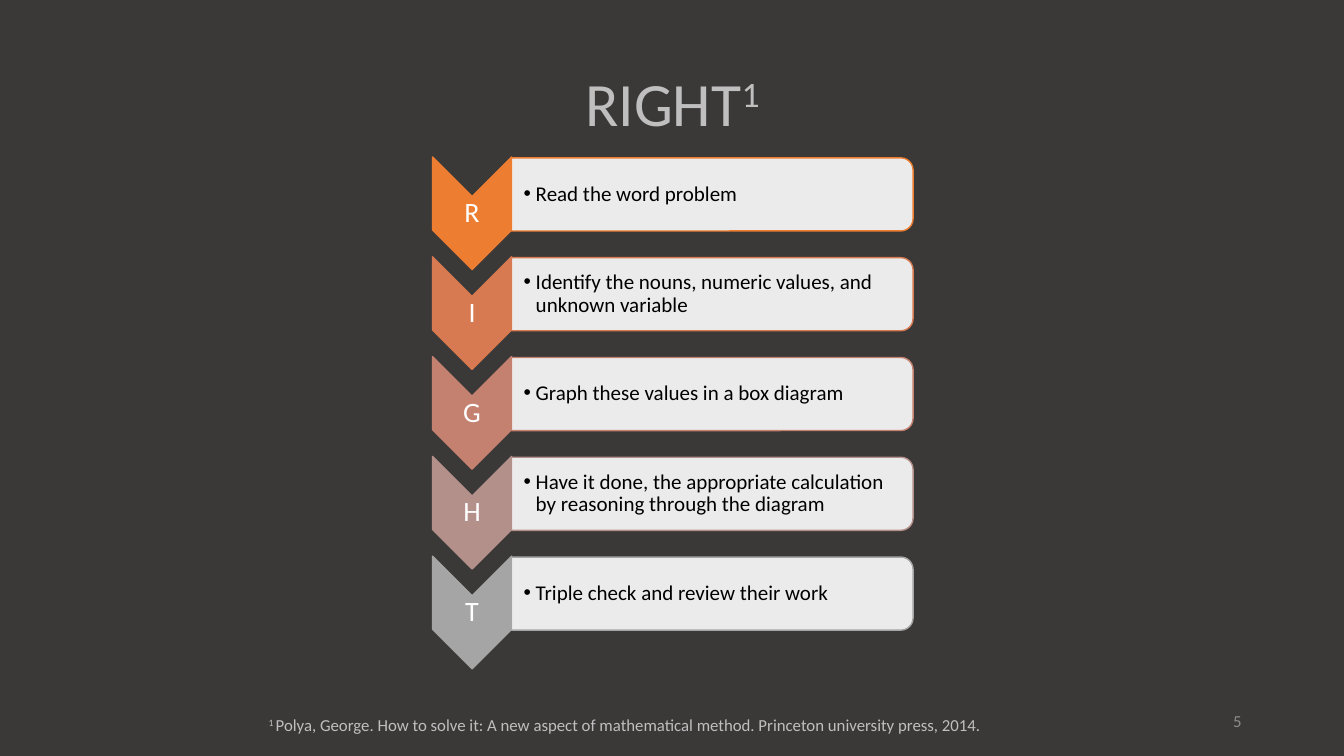
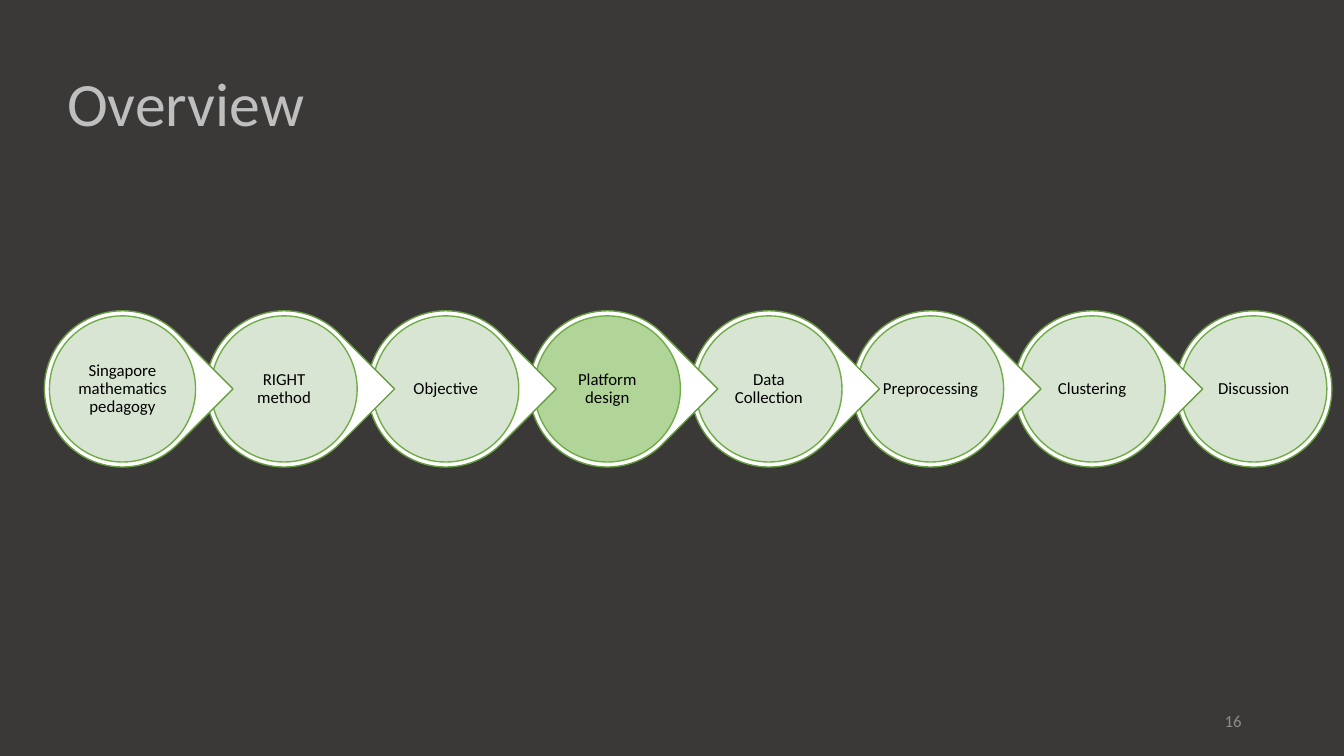
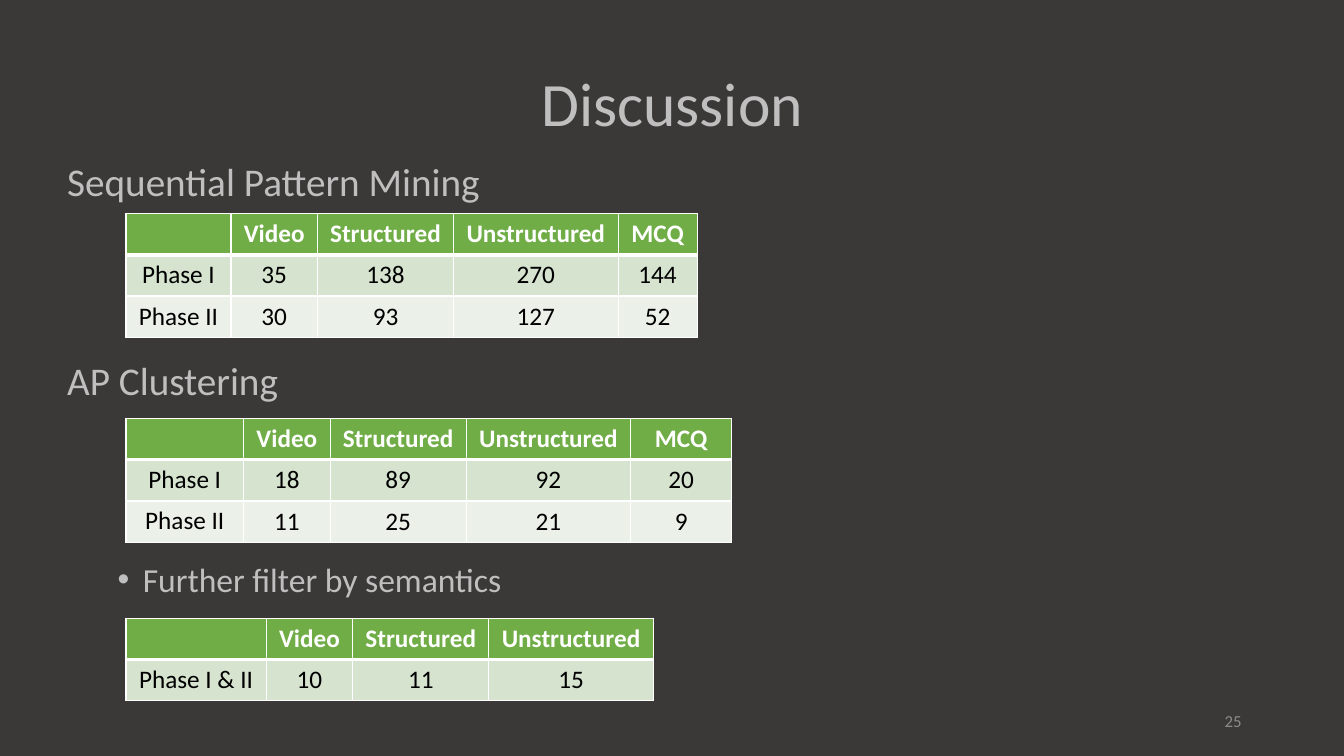
from dataclasses import dataclass

from lxml import etree
from pptx import Presentation, util as u
from pptx.dml.color import RGBColor
from pptx.enum import shapes, text
from pptx.oxml import ns

# The grid has square modules of 1/12 inch: 160 columns by 90 rows.
COLUMNS, ROWS = 160, 90
MODULE = u.Inches(1) / 12
SHAPE = shapes.MSO_SHAPE
ALIGN = text.PP_ALIGN
ANCHOR = text.MSO_ANCHOR


@dataclass(frozen=True)
class Theme:
    font: str = "Calibri"
    background: str = "3B3838"
    title: str = "BFBFBF"
    page_number: str = "8C8C8C"
    white: str = "FFFFFF"
    black: str = "000000"
    green: str = "70AD47"
    green_edge: str = "669D40"
    green_pale: str = "D5E3CF"
    green_faint: str = "EBF1E9"
    green_current: str = "A9D18E"
    steps: tuple = ("ED7D31", "D87A51", "C48170", "B4908B", "A5A5A5")
    title_size: int = 44
    heading_size: int = 28
    bullet_size: int = 24
    letter_size: int = 20
    cell_size: int = 18
    step_size: int = 15
    small_size: int = 12


THEME = Theme()


def grid(*modules):
    return [u.Emu(round(value * MODULE)) for value in modules]


def add_xml(parent, tag, **attributes):
    return etree.SubElement(parent, ns.qn(tag), attributes)


def write(para, *pieces, size, color, align=ALIGN.LEFT, bold=False,
          spacing=0.9, before=0, bullet=None, indent=0, hanging=0):
    """Fill a paragraph; a piece is a string or (string, raised by percent)."""
    props = para._p.get_or_add_pPr()
    props.set("marL", str(u.Inches(indent)))
    props.set("indent", str(-u.Inches(hanging)))
    if bullet:
        add_xml(props, "a:buFont", typeface="Arial")
        add_xml(props, "a:buChar", char=bullet)
    else:
        add_xml(props, "a:buNone")
    para.alignment = align
    para.line_spacing = spacing
    para.space_before = u.Pt(before)
    for piece in pieces:
        words, raised = (piece, 0) if isinstance(piece, str) else piece
        span = para.add_run()
        span.text = words
        span.font.name = THEME.font
        span.font.size = u.Pt(size)
        span.font.bold = bold
        span.font.color.rgb = RGBColor.from_string(color)
        if raised:
            span._r.get_or_add_rPr().set("baseline", str(raised * 1000))


class SlideWriter:
    """Holds the deck, its theme and the slide being written."""

    def __init__(self, theme):
        self.theme = theme
        self.deck = Presentation()
        self.deck.slide_width, self.deck.slide_height = grid(COLUMNS, ROWS)
        self.paint(self.deck.slide_master.background.fill, theme.background)
        self.page = None

    @staticmethod
    def paint(fill, color, opacity=100):
        fill.solid()
        fill.fore_color.rgb = RGBColor.from_string(color)
        if opacity < 100:
            add_xml(fill._xPr.find(".//" + ns.qn("a:srgbClr")), "a:alpha",
                    val=str(opacity * 1000))

    @staticmethod
    def place(box, left, top, width, height):
        box.left, box.top, box.width, box.height = grid(left, top, width, height)

    @staticmethod
    def frame(box, anchor=ANCHOR.TOP, insets=None):
        frame = box.text_frame
        frame.word_wrap = True
        frame.auto_size = text.MSO_AUTO_SIZE.NONE
        frame.vertical_anchor = anchor
        if insets:
            (frame.margin_left, frame.margin_top, frame.margin_right,
             frame.margin_bottom) = [u.Inches(inset) for inset in insets]
        return frame

    def start(self, number, *title, align=ALIGN.CENTER, layout="Title Only"):
        """Add a slide with its title and page number."""
        chosen = self.deck.slide_layouts.get_by_name(layout)
        self.page = self.deck.slides.add_slide(chosen)
        box = self.page.shapes.title
        self.place(box, 6.8, 6.6, 146.5, 12.1)
        write(self.frame(box, ANCHOR.MIDDLE).paragraphs[0], *title,
              size=self.theme.title_size, color=self.theme.title, align=align)
        self.label(113, 83.4, 36, 4.8, str(number), anchor=ANCHOR.MIDDLE,
                   size=self.theme.small_size, color=self.theme.page_number,
                   align=ALIGN.RIGHT, spacing=1)

    def label(self, left, top, width, height, *pieces,
              anchor=ANCHOR.TOP, insets=None, **style):
        box = self.page.shapes.add_textbox(*grid(left, top, width, height))
        write(self.frame(box, anchor, insets).paragraphs[0], *pieces, **style)

    def shape(self, kind, left, top, width, height, fill, line,
              turn=0, opacity=100):
        """Add a preset shape; a quarter turn keeps the visible frame."""
        if turn == 90:
            left += (width - height) / 2
            top += (height - width) / 2
            width, height = height, width
        shape = self.page.shapes.add_shape(kind, *grid(left, top, width, height))
        shape.shadow.inherit = False
        shape.rotation = turn
        self.paint(shape.fill, fill, opacity)
        shape.line.color.rgb = RGBColor.from_string(line)
        shape.line.width = u.Pt(1)
        return shape

    def body(self, left, top, width, height, items):
        """Fill the body placeholder with (words, level, space before)."""
        box = self.page.placeholders[1]
        self.place(box, left, top, width, height)
        frame = self.frame(box)
        for index, (words, level, before) in enumerate(items):
            para = frame.add_paragraph() if index else frame.paragraphs[0]
            para.level = level
            style = (dict(size=self.theme.bullet_size, bullet="•",
                          indent=0.75, hanging=0.25)
                     if level else dict(size=self.theme.heading_size))
            write(para, words, color=self.theme.title, before=before, **style)

    def borders(self, cell, **widths):
        props = cell._tc.get_or_add_tcPr()
        for side in "LRTB":
            width = u.Pt(widths.get(side, 1))
            line = add_xml(props, "a:ln" + side, w=str(width))
            fill = add_xml(line, "a:solidFill")
            add_xml(fill, "a:srgbClr", val=self.theme.white)

    def table(self, left, top, widths, row_height, rows):
        theme = self.theme
        table = self.page.shapes.add_table(
            len(rows), len(widths),
            *grid(left, top, sum(widths), row_height * len(rows))).table
        table.first_row = table.horz_banding = False
        for column, width in zip(table.columns, grid(*widths)):
            column.width = width
        fills = (theme.green, theme.green_pale, theme.green_faint)
        for r, values in enumerate(rows):
            table.rows[r].height = grid(row_height)[0]
            for c, value in enumerate(values):
                cell = table.cell(r, c)
                self.borders(cell, T=3 if r == 1 else 1, B=1 if r else 3)
                self.paint(cell.fill, fills[r])
                cell.vertical_anchor = ANCHOR.MIDDLE if r and c else ANCHOR.TOP
                if value != "":
                    write(cell.text_frame.paragraphs[0], str(value),
                          size=theme.cell_size, bold=not r, spacing=1,
                          color=theme.black if r else theme.white,
                          align=ALIGN.CENTER)


def right_slide(writer):
    theme = writer.theme
    writer.start(5, "RIGHT", ("1", 30))
    steps = (
        ("R", "Read the word problem"),
        ("I", "Identify the nouns, numeric values, and unknown variable"),
        ("G", "Graph these values in a box diagram"),
        ("H", "Have it done, the appropriate calculation by reasoning "
              "through the diagram"),
        ("T", "Triple check and review their work"),
    )
    # One chevron and one panel for each step
    first_top, pitch = 18.7, 11.88
    chevron_left, chevron_width, panel_left = 51.5, 9.4, 60.9
    for index, ((letter, words), color) in enumerate(zip(steps, theme.steps)):
        top = first_top + index * pitch
        writer.shape(SHAPE.CHEVRON, chevron_left, top, chevron_width, 13.4,
                     color, color, turn=90)
        writer.label(chevron_left, top + 4.7, chevron_width, 4, letter,
                     anchor=ANCHOR.MIDDLE, insets=[0.01] * 4,
                     size=theme.letter_size, color=theme.white,
                     align=ALIGN.CENTER)
        writer.shape(SHAPE.ROUND_2_SAME_RECTANGLE, panel_left, top + 0.1,
                     47.8, 8.7, theme.white, color, turn=90, opacity=90)
        writer.label(panel_left, top + 0.5, 47.3, 7.9, words,
                     anchor=ANCHOR.MIDDLE, insets=(0.12, 0.01, 0.01, 0.01),
                     size=theme.step_size, color=theme.black,
                     bullet="•", indent=0.12, hanging=0.12)
    # Reference
    writer.label(30.8, 84.5, 104.6, 3.6, ("1 ", 30),
                 "Polya, George. How to solve it: A new aspect of mathematical "
                 "method. Princeton university press, 2014.",
                 size=theme.small_size, color=theme.title, spacing=1)


def overview_slide(writer):
    theme = writer.theme
    writer.start(16, "Overview", align=ALIGN.LEFT)
    topics = ("Singapore mathematics pedagogy", "RIGHT method", "Objective",
              "Platform design", "Data Collection", "Preprocessing",
              "Clustering", "Discussion")
    current = "Platform design"
    # Drawn from the last to the first, so that each drop covers the next
    first_left, top, pitch, drop, disc = 5.28, 37, 19.24, 18.6, 17.4
    rim = (drop - disc) / 2
    for index, topic in reversed(list(enumerate(topics))):
        left = first_left + index * pitch
        is_last = topic == topics[-1]
        writer.shape(SHAPE.OVAL if is_last else SHAPE.TEAR, left, top,
                     drop, drop, theme.white, theme.green_edge,
                     turn=0 if is_last else 45)
        circle = writer.shape(
            SHAPE.OVAL, left + rim, top + rim, disc, disc,
            theme.green_current if topic == current else theme.green_pale,
            theme.green, opacity=90)
        frame = writer.frame(circle, ANCHOR.MIDDLE, [0.02] * 4)
        write(frame.paragraphs[0], topic, size=theme.small_size,
              color=theme.black, align=ALIGN.CENTER)


def discussion_slide(writer):
    writer.start(25, "Discussion", layout="Title and Content")
    # Headings, with room below each for its table
    writer.body(6.8, 18.7, 153.2, 71.3, (
        ("Sequential Pattern Mining", 0, 0),
        ("AP Clustering", 0, 112),
        ("Further filter by semantics", 1, 114),
    ))
    # Tables
    header = ("", "Video", "Structured", "Unstructured", "MCQ")
    shared = (10.3, 16.2, 19.6)
    tables = (
        (25.4, (12.5, *shared, 9.4), (header, ("Phase I", 35, 138, 270, 144),
                                      ("Phase II", 30, 93, 127, 52))),
        (49.8, (14, *shared, 12), (header, ("Phase I", 18, 89, 92, 20),
                                   ("Phase II", 11, 25, 21, 9))),
        (73.6, (16.7, *shared), (header[:-1], ("Phase I & II", 10, 11, 15))),
    )
    for top, widths, rows in tables:
        writer.table(15, top, widths, 4.92, rows)


def main():
    writer = SlideWriter(THEME)
    right_slide(writer)
    overview_slide(writer)
    discussion_slide(writer)
    writer.deck.save("out.pptx")


if __name__ == "__main__":
    main()
